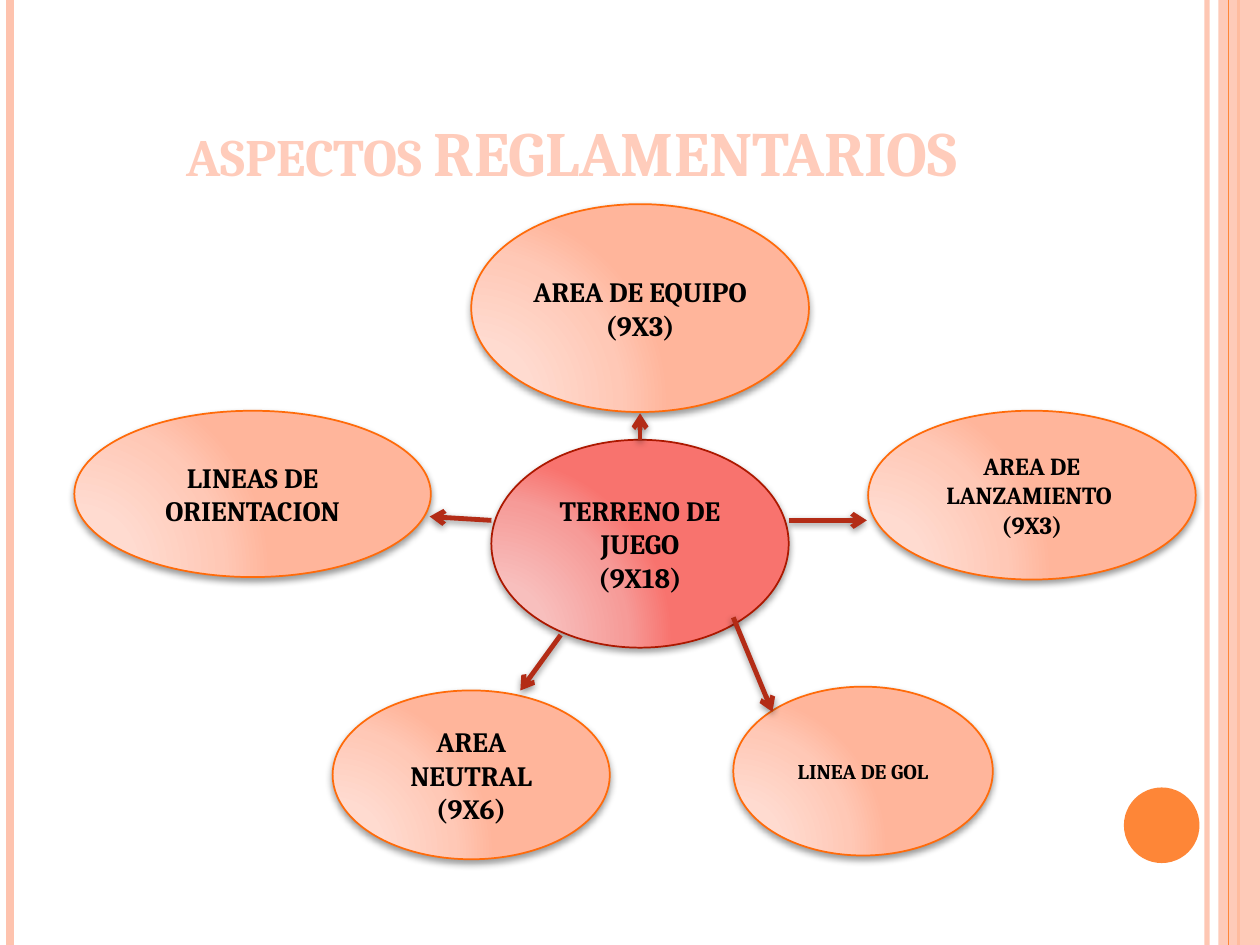
import pptx
import pptx.util
import pptx.dml.color
import pptx.enum.shapes
import pptx.enum.text
import pptx.oxml
import pptx.oxml.ns

Inches = pptx.util.Inches
Pt = pptx.util.Pt
RGB = pptx.dml.color.RGBColor.from_string
qn = pptx.oxml.ns.qn
NS = pptx.oxml.ns.nsdecls("a")
KINDS = pptx.enum.shapes.MSO_SHAPE
ALIGN = pptx.enum.text.PP_ALIGN
ANCHOR = pptx.enum.text.MSO_ANCHOR

HUES = {"pale": "FEC3AE", "orange": "FE8637", "title": "FFCCBB", "edge": "FF6B0A",
        "core": "AC1800", "arrow": "B32C16", "text": "000000"}
FADES = {
    "edge": [(0, "FFDED5"), (30, "FFDBD0"), (75, "FFC8B6"), (100, "FFB59B")],
    "core": [(0, "F8C5C3"), (30, "F8BFBD"), (75, "F69B98"), (100, "F8736E")],
}

deck = pptx.Presentation()
deck.slide_width = Inches(10)
deck.slide_height = Inches(7.5)
slide = deck.slides.add_slide(deck.slide_layouts[6])
shapes = slide.shapes


def add_line(x1, y1, x2, y2, hue, width, shade=""):
    line = shapes.add_connector(pptx.enum.shapes.MSO_CONNECTOR.STRAIGHT,
                                Inches(x1), Inches(y1), Inches(x2), Inches(y2))
    line.line.color.rgb = RGB(HUES[hue])
    line.line.width = Pt(width)
    line.element.spPr.append(pptx.oxml.parse_xml(f"<a:effectLst {NS}>{shade}</a:effectLst>"))
    return line


def add_run(para, text, size, hue):
    run = para.add_run()
    run.text = text
    run.font.name = "Cambria"
    run.font.size = Pt(size)
    run.font.bold = True
    run.font.color.rgb = RGB(HUES[hue])


def_shade = ('<a:outerShdw blurRad="50800" dist="{}" dir="5400000" rotWithShape="0">'
             '<a:srgbClr val="000000"><a:alpha val="{}"/></a:srgbClr></a:outerShdw>')

rail = add_line(9.58, 0, 9.58, 7.5, "pale", 3)
add_line(0.08, 0, 0.08, 7.5, "pale", 4.5)
add_line(9.83, 0, 9.83, 7.5, "orange", 1.5)
band = shapes.add_shape(KINDS.RECTANGLE, Inches(9.67), 0, Inches(0.33), Inches(7.5))
add_line(9.75, 0, 9.75, 7.5, "orange", 0.75)
dot = shapes.add_shape(KINDS.OVAL, Inches(8.92), Inches(6.25), Inches(0.6), Inches(0.6))
for shape, hue in [(band, "pale"), (dot, "orange")]:
    shape.fill.solid()
    shape.fill.fore_color.rgb = RGB(HUES[hue])
    shape.line.fill.background()
    shape.shadow.inherit = False
for part, alpha in [(rail, 93000), (band, 87000)]:
    tint = next(part.element.spPr.iter(qn("a:srgbClr")))
    tint.append(pptx.oxml.parse_xml(f'<a:alpha {NS} val="{alpha}"/>'))

title = shapes.add_textbox(Inches(0.5), Inches(0.3), Inches(8.17), Inches(1.25))
frame = title.text_frame
frame.word_wrap = True
frame.vertical_anchor = ANCHOR.BOTTOM
para = frame.paragraphs[0]
para.alignment = ALIGN.CENTER
for text, size in [("ASPECTOS ", 30), ("REGLAMENTARIOS", 36), (" ", 30)]:
    add_run(para, text, size, "title")

nodes = [
    (2.64, 5.48, 2.2, 1.34, "edge", 16, ["AREA NEUTRAL", "(9X6)"]),
    (3.9, 3.49, 2.36, 1.65, "core", 16, ["TERRENO DE JUEGO", "(9X18)"]),
    (3.74, 1.62, 2.68, 1.65, "edge", 16, ["AREA DE EQUIPO", "(9X3)"]),
    (6.89, 3.26, 2.6, 1.34, "edge", 14, ["AREA DE LANZAMIENTO ", "(9X3)"]),
    (5.82, 5.45, 2.06, 1.34, "edge", 12, ["LINEA DE GOL"]),
    (0.59, 3.26, 2.83, 1.32, "edge", 16, ["LINEAS DE ORIENTACION"]),
]
for x, y, w, h, hue, size, texts in nodes:
    node = shapes.add_shape(KINDS.FLOWCHART_CONNECTOR, Inches(x), Inches(y), Inches(w), Inches(h))
    node.line.color.rgb = RGB(HUES[hue])
    node.line.width = Pt(1)
    node.shadow.inherit = False
    props = node.element.spPr
    stops = "".join(f'<a:gs pos="{pos * 1000}"><a:srgbClr val="{tone}"/></a:gs>'
                    for pos, tone in FADES[hue])
    props.find(qn("a:ln")).addprevious(pptx.oxml.parse_xml(
        f'<a:gradFill {NS} rotWithShape="1"><a:gsLst>{stops}</a:gsLst><a:path path="circle">'
        '<a:fillToRect l="5000" t="100000" r="120000" b="10000"/></a:path></a:gradFill>'))
    props.replace(props.find(qn("a:effectLst")), pptx.oxml.parse_xml(
        f"<a:effectLst {NS}>{def_shade.format(25400, 40000)}</a:effectLst>"))
    frame = node.text_frame
    frame.word_wrap = True
    frame.vertical_anchor = ANCHOR.MIDDLE
    for i, text in enumerate(texts):
        para = frame.add_paragraph() if i else frame.paragraphs[0]
        para.alignment = ALIGN.CENTER
        add_run(para, text, size, "text")

arrows = [
    (5.82, 4.9, 6.13, 5.65),
    (4.45, 5.04, 4.13, 5.48),
    (6.26, 4.13, 6.88, 4.13),
    (3.9, 4.13, 3.41, 4.1),
    (5.08, 3.49, 5.08, 3.28),
]
for ends in arrows:
    arrow = add_line(*ends, "arrow", 2.75, def_shade.format(20320, 42000))
    arrow.element.spPr.find(qn("a:ln")).append(
        pptx.oxml.parse_xml(f'<a:tailEnd {NS} type="arrow"/>'))

deck.save("out.pptx")
